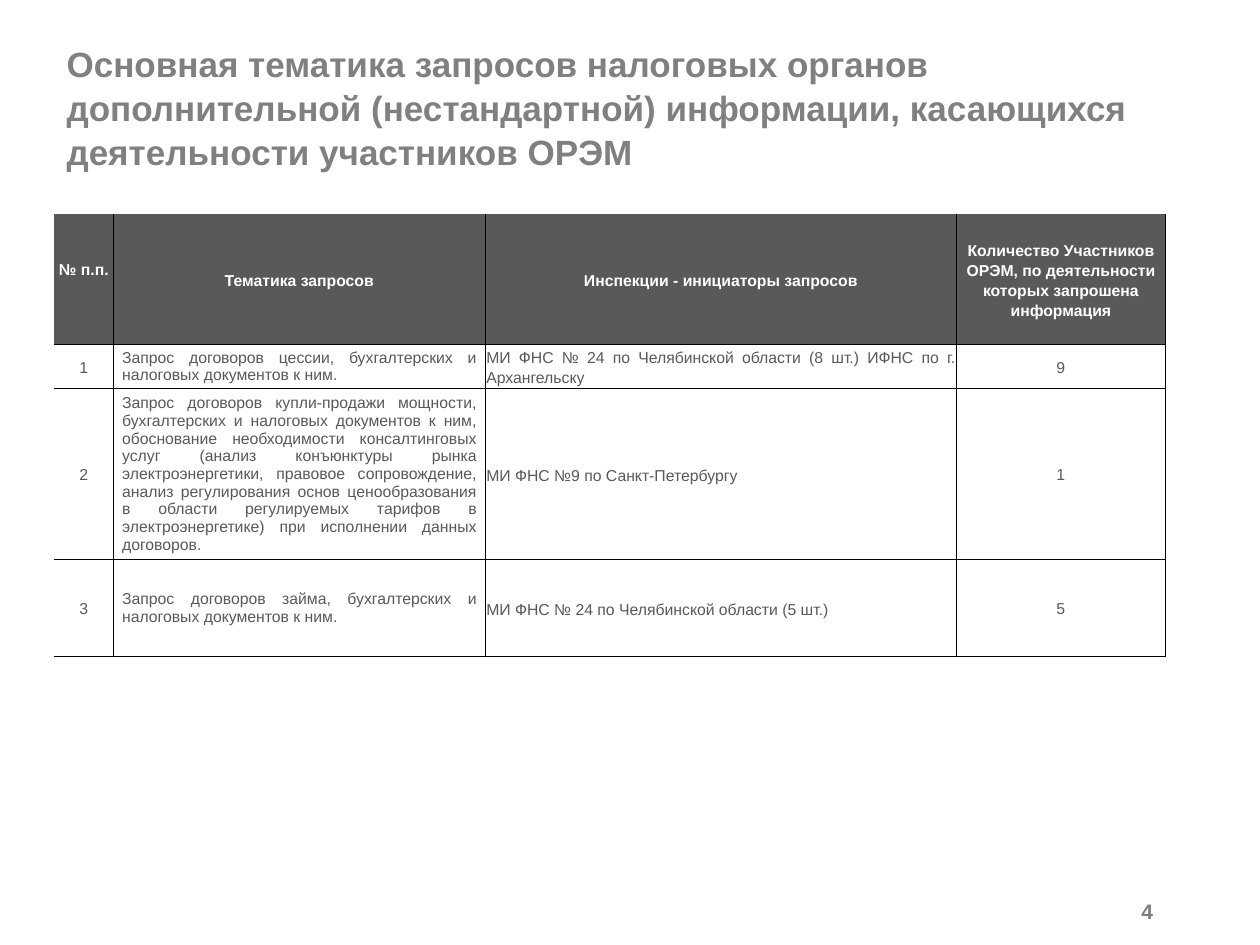
"""Build the slide on tax authority requests to wholesale market participants."""
from lxml import etree
from pptx import Presentation
from pptx.dml.color import RGBColor
from pptx.enum.text import MSO_ANCHOR, PP_ALIGN
from pptx.oxml.ns import qn
from pptx.util import Inches, Pt

LEFT, CENTER, RIGHT, JUSTIFY = PP_ALIGN.LEFT, PP_ALIGN.CENTER, PP_ALIGN.RIGHT, PP_ALIGN.JUSTIFY
MIDDLE = MSO_ANCHOR.MIDDLE


def write(frame, text, size=9, color="595959", bold=False, align=LEFT, spacing=None):
    frame.word_wrap = True
    paragraph = frame.paragraphs[0]
    paragraph.alignment = align
    paragraph.line_spacing = spacing
    run = paragraph.add_run()
    run.text = text
    run.font.name = "Arial"
    run.font.size = Pt(size)
    run.font.bold = bold
    run.font.color.rgb = RGBColor.from_string(color)


def draw_borders(cell, sides):
    properties = cell._tc.get_or_add_tcPr()
    for position, side in enumerate("LRTB"):
        line = etree.Element(qn(f"a:ln{side}"), w=str(Pt(0.5)))
        if side in sides:
            solid = etree.SubElement(line, qn("a:solidFill"))
            etree.SubElement(solid, qn("a:srgbClr"), val="000000")
        else:
            etree.SubElement(line, qn("a:noFill"))
        properties.insert(position, line)


prs = Presentation()
prs.slide_width, prs.slide_height = Inches(10), Inches(7.5)
slide = prs.slides.add_slide(prs.slide_layouts[6])

title = slide.shapes.add_textbox(Inches(0.43), Inches(0.3), Inches(8.82), Inches(1.09)).text_frame
title.vertical_anchor = MIDDLE
write(title, "Основная тематика запросов налоговых органов дополнительной (нестандартной) "
      "информации, касающихся деятельности участников ОРЭМ",
      size=20, color="808080", bold=True, spacing=1.05)

page_number = slide.shapes.add_textbox(Inches(8.15), Inches(7.06), Inches(1.1), Inches(0.34)).text_frame
page_number.vertical_anchor = MIDDLE
write(page_number, "4", size=12, color="7F7F7F", bold=True, align=RIGHT)

requests = [
    ("№ п.п.", "Тематика запросов", "Инспекции - инициаторы запросов",
     "Количество Участников ОРЭМ, по деятельности которых запрошена информация"),
    ("1", "Запрос договоров цессии, бухгалтерских и налоговых документов к ним.",
     "МИ ФНС № 24 по Челябинской области (8 шт.) ИФНС по г. Архангельску", "9"),
    ("2", "Запрос договоров купли-продажи мощности, бухгалтерских и налоговых документов к ним, "
     "обоснование необходимости консалтинговых услуг (анализ конъюнктуры рынка электроэнергетики, "
     "правовое сопровождение, анализ регулирования основ ценообразования в области регулируемых "
     "тарифов в электроэнергетике) при исполнении данных договоров.",
     "МИ ФНС №9 по Санкт-Петербургу", "1"),
    ("3", "Запрос договоров займа, бухгалтерских и налоговых документов к ним.",
     "МИ ФНС № 24 по Челябинской области (5 шт.)", "5"),
]
column_widths = [0.47, 2.95, 3.74, 1.66]
row_heights = [1.03, 0.35, 1.26, 0.77]
column_aligns = [CENTER, JUSTIFY, JUSTIFY, CENTER]

table = slide.shapes.add_table(
    len(row_heights), len(column_widths), Inches(0.43), Inches(1.7),
    Inches(sum(column_widths)), Inches(sum(row_heights))).table
for column, width in zip(table.columns, column_widths):
    column.width = Inches(width)
for row, height in zip(table.rows, row_heights):
    row.height = Inches(height)

for r, request in enumerate(requests):
    header = r == 0
    for c, text in enumerate(request):
        cell = table.cell(r, c)
        tight = header or c == 2
        cell.margin_left = cell.margin_right = Inches(0.01 if tight else 0.07)
        cell.margin_top = Inches(0.01 if tight else 0)
        cell.margin_bottom = Inches(0.15 if header and c == 0 else 0)
        cell.vertical_anchor = MIDDLE
        cell.fill.solid()
        cell.fill.fore_color.rgb = RGBColor.from_string("595959" if header else "FFFFFF")
        draw_borders(cell, "RB" + ("L" if c else "") + ("" if header else "T"))
        single = c == 0 if header else c == 1
        write(cell.text_frame, text, color="FFFFFF" if header else "595959", bold=header,
              align=CENTER if header else column_aligns[c], spacing=None if single else 1.15)

prs.save("out.pptx")
